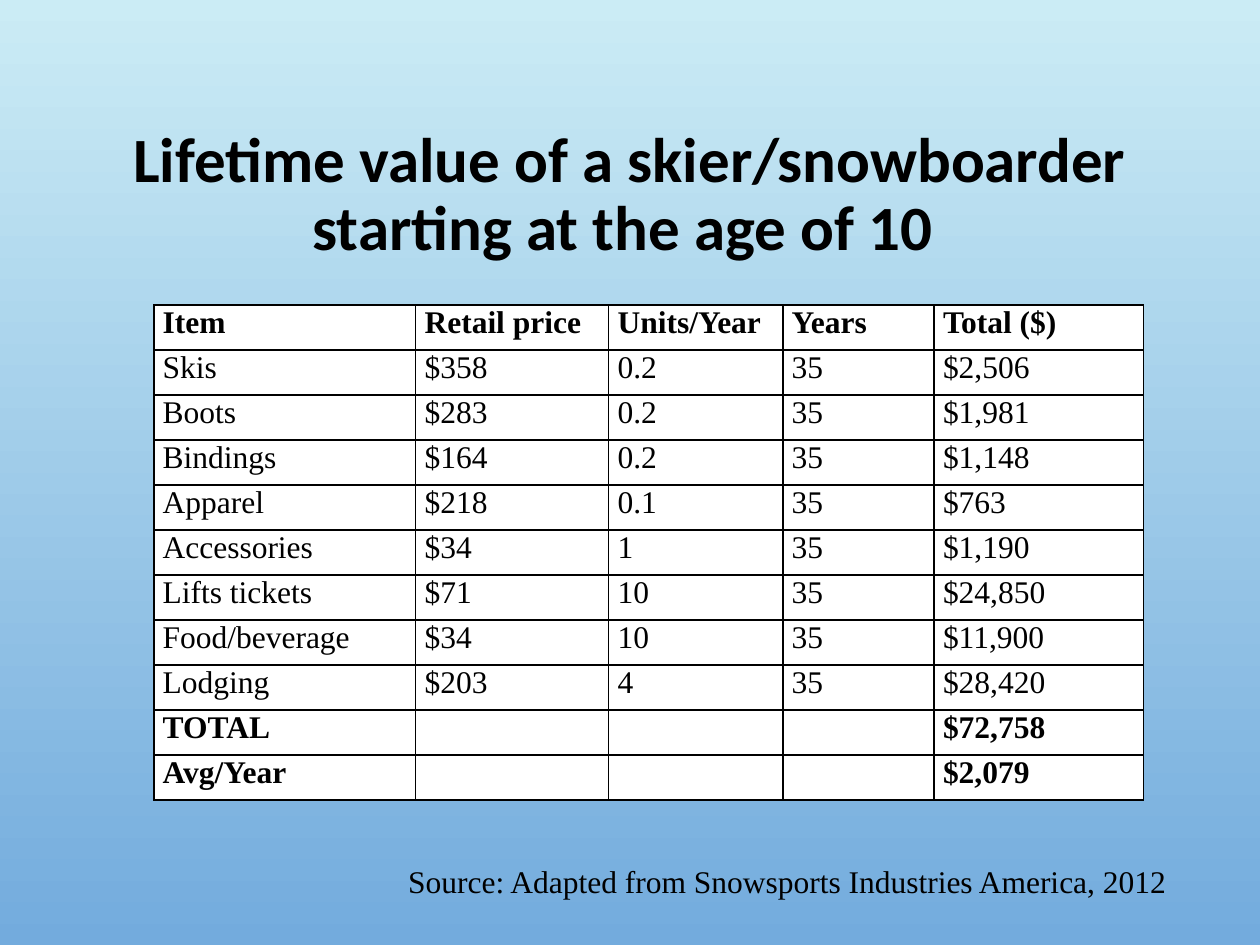
from typing import NamedTuple

from lxml.etree import SubElement
from pptx import Presentation
from pptx.dml.color import RGBColor
from pptx.enum.text import MSO_ANCHOR, PP_ALIGN
from pptx.oxml.ns import qn
from pptx.util import Cm, Pt

BLACK = RGBColor(0x00, 0x00, 0x00)
WHITE = RGBColor(0xFF, 0xFF, 0xFF)
SKY_TOP = RGBColor(0xCB, 0xEC, 0xF5)
SKY_BOTTOM = RGBColor(0x73, 0xAB, 0xDD)
TITLE_FONT = "Calibri"
BODY_FONT = "Times New Roman"


class Row(NamedTuple):
    item: str
    price: str = ""
    units: str = ""
    years: str = ""
    total: str = ""


HEADER = Row("Item", "Retail price", "Units/Year", "Years", "Total ($)")
ITEMS = [
    Row("Skis", "$358", "0.2", "35", "$2,506"),
    Row("Boots", "$283", "0.2", "35", "$1,981"),
    Row("Bindings", "$164", "0.2", "35", "$1,148"),
    Row("Apparel", "$218", "0.1", "35", "$763"),
    Row("Accessories", "$34", "1", "35", "$1,190"),
    Row("Lifts tickets", "$71", "10", "35", "$24,850"),
    Row("Food/beverage", "$34", "10", "35", "$11,900"),
    Row("Lodging", "$203", "4", "35", "$28,420"),
]
SUMMARY = [Row("TOTAL", total="$72,758"), Row("Avg/Year", total="$2,079")]
COL_WIDTHS = [5.28, 3.89, 3.51, 3.05, 4.22]
TABLE_HEIGHT = 9.98


def add_run(p, text: str, font: str, size: int, bold: bool = False) -> None:
    r = p.add_run()
    r.text = text
    r.font.name = font
    r.font.size = Pt(size)
    r.font.bold = bold
    r.font.color.rgb = BLACK


def add_borders(cell, color: RGBColor, width: int) -> None:
    tc_pr = cell._tc.get_or_add_tcPr()
    for side in ("lnL", "lnR", "lnT", "lnB"):
        ln = SubElement(tc_pr, qn(f"a:{side}"), w=str(width))
        fill = SubElement(ln, qn("a:solidFill"))
        SubElement(fill, qn("a:srgbClr"), val=str(color))


def format_cell(cell, text: str, bold: bool) -> None:
    cell.margin_left = cell.margin_right = Cm(0.18)
    cell.margin_top = cell.margin_bottom = 0
    add_borders(cell, BLACK, Pt(1))
    cell.fill.solid()
    cell.fill.fore_color.rgb = WHITE
    p = cell.text_frame.paragraphs[0]
    p.alignment = PP_ALIGN.JUSTIFY
    if text:
        add_run(p, text, BODY_FONT, 18, bold)


def add_background(s) -> None:
    fill = s.background.fill
    fill.gradient()
    fill.gradient_angle = 270
    for stop, color in zip(fill.gradient_stops, (SKY_TOP, SKY_BOTTOM)):
        stop.color.rgb = color


def add_title(s) -> None:
    sp = s.shapes.title
    sp.left, sp.top, sp.width, sp.height = Cm(1.9), Cm(1.73), Cm(21.59), Cm(4.45)
    tf = sp.text_frame
    tf.word_wrap = True
    tf.vertical_anchor = MSO_ANCHOR.MIDDLE
    p = tf.paragraphs[0]
    p.alignment = PP_ALIGN.CENTER
    p.line_spacing = 0.9
    add_run(p, "Lifetime value of a skier/snowboarder starting at the age of 10 ",
            TITLE_FONT, 36, bold=True)


def add_value_table(s) -> None:
    rows = [HEADER, *ITEMS, *SUMMARY]
    table = s.shapes.add_table(len(rows), len(COL_WIDTHS), Cm(3.1), Cm(6.15),
                               Cm(sum(COL_WIDTHS)), Cm(TABLE_HEIGHT)).table
    table.horz_banding = False
    for col, width in zip(table.columns, COL_WIDTHS):
        col.width = Cm(width)
    for i, row in enumerate(rows):
        table.rows[i].height = Cm(TABLE_HEIGHT / len(rows))
        for j, text in enumerate(row):
            format_cell(table.cell(i, j), text, bold=row not in ITEMS)


def add_source(s) -> None:
    tf = s.shapes.add_textbox(Cm(7.98), Cm(17.25), Cm(17.78), Cm(1.02)).text_frame
    tf.word_wrap = True
    add_run(tf.paragraphs[0],
            "Source: Adapted from Snowsports Industries America, 2012", BODY_FONT, 18)


def main() -> None:
    prs = Presentation()
    prs.slide_width, prs.slide_height = Cm(25.4), Cm(19.05)
    s = prs.slides.add_slide(prs.slide_layouts[5])
    add_background(s)
    add_title(s)
    add_value_table(s)
    add_source(s)
    prs.save("out.pptx")


if __name__ == "__main__":
    main()
